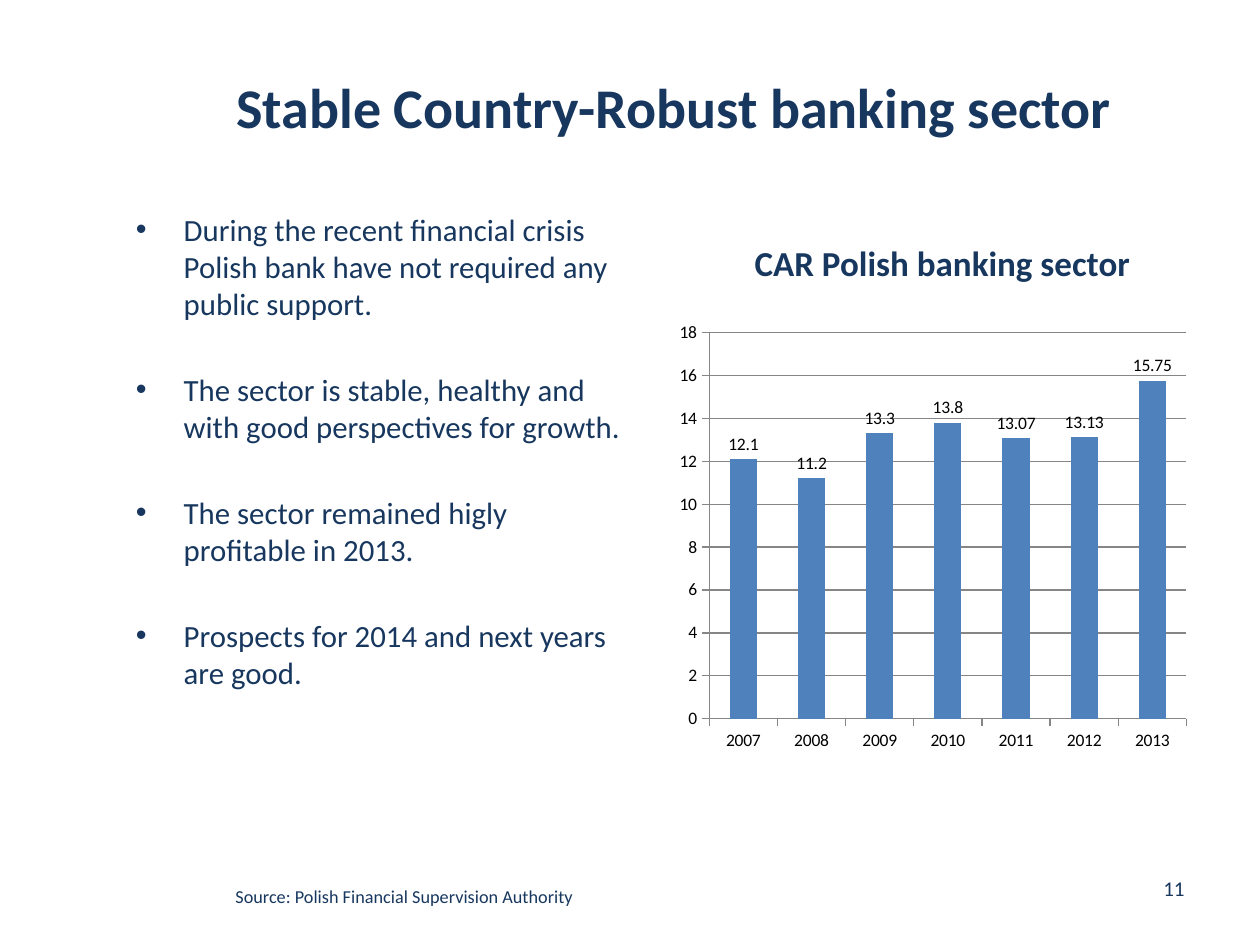
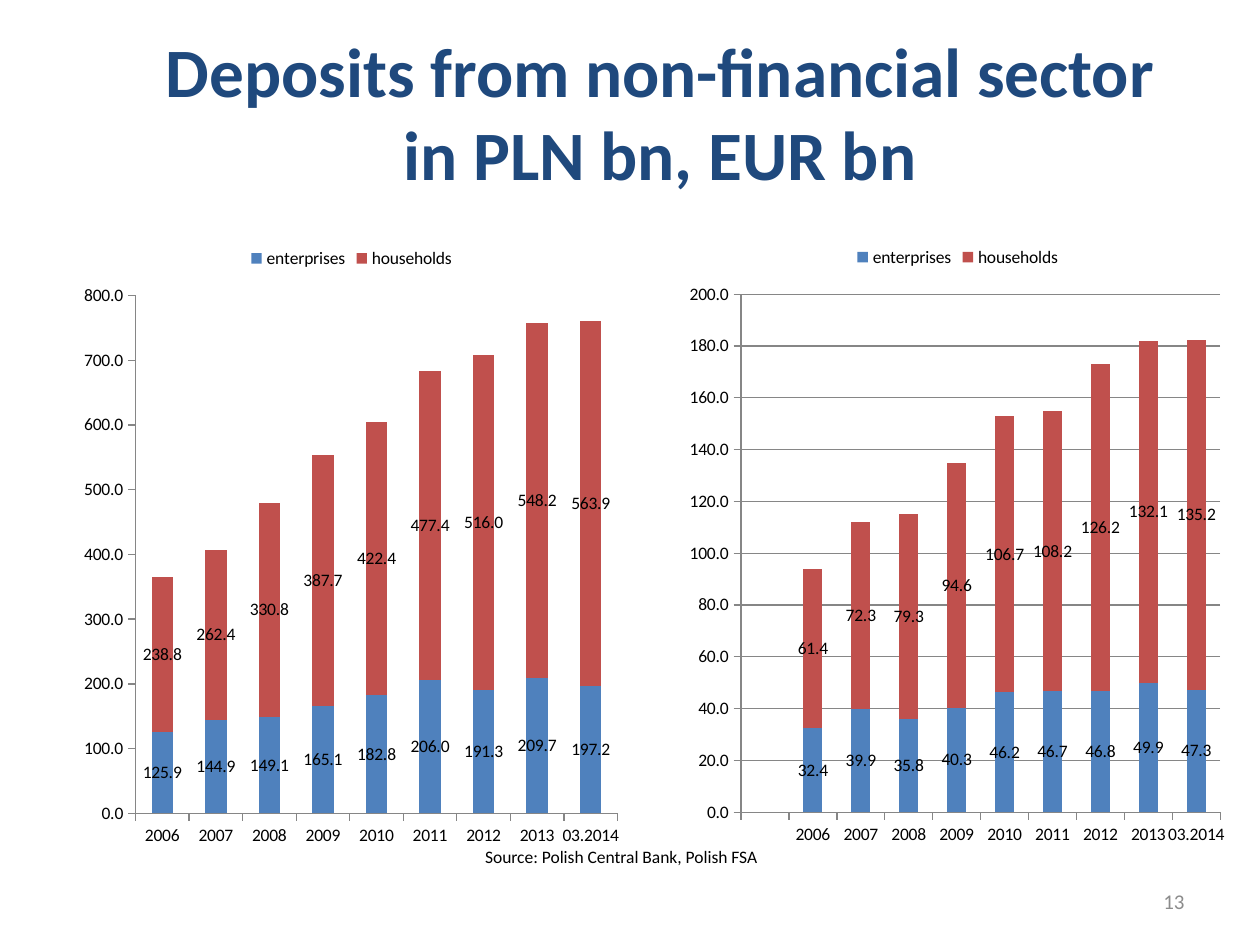
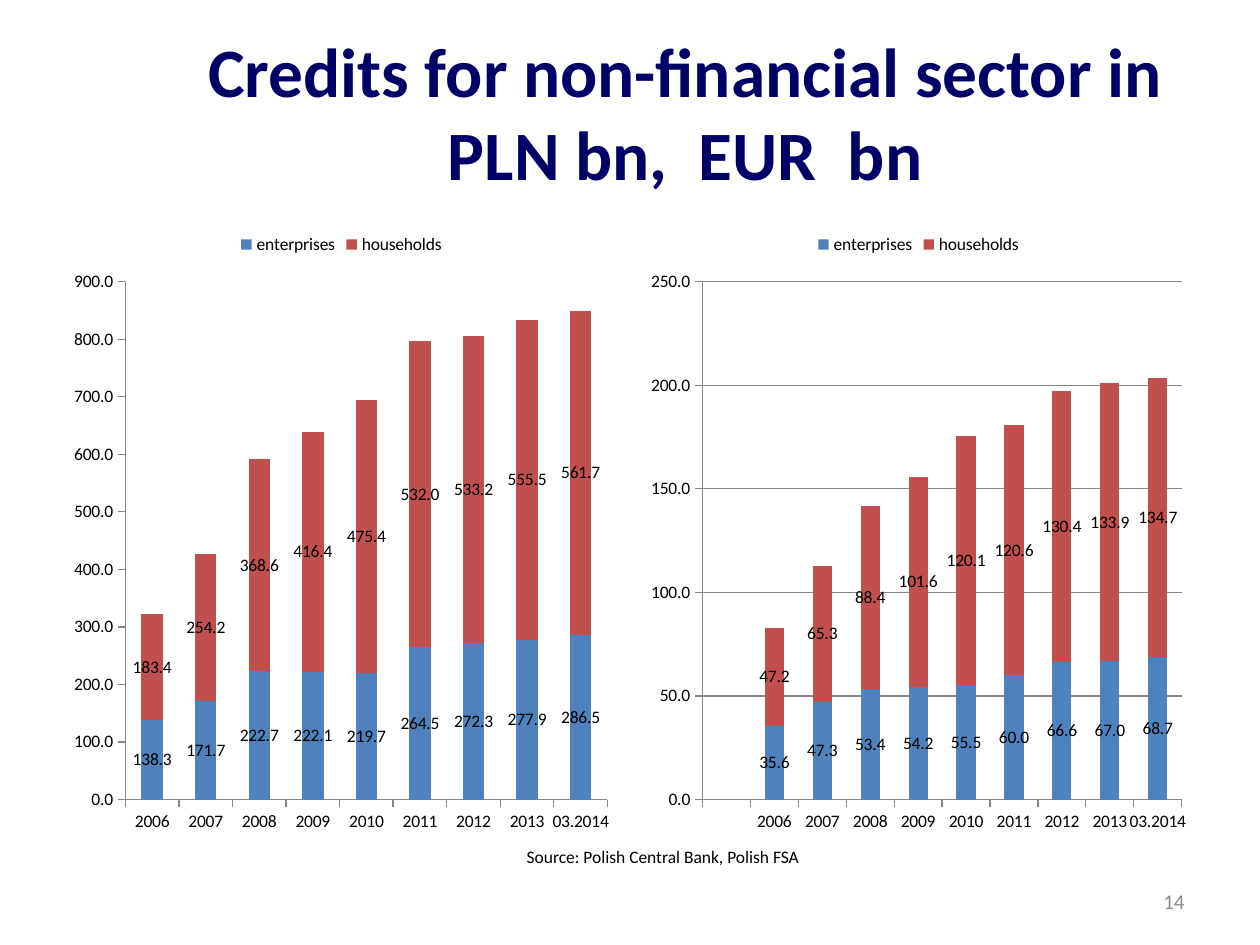
from lxml.etree import SubElement
from pptx import Presentation
from pptx.chart.data import CategoryChartData
from pptx.dml.color import RGBColor
from pptx.enum.chart import XL_CHART_TYPE, XL_LABEL_POSITION, XL_LEGEND_POSITION, XL_TICK_MARK
from pptx.enum.text import MSO_ANCHOR, MSO_AUTO_SIZE, PP_ALIGN
from pptx.oxml.ns import qn
from pptx.util import Inches, Pt

FONT = "Calibri"
BLACK = RGBColor(0x00, 0x00, 0x00)
NAVY = RGBColor(0x17, 0x37, 0x5E)
DEPOSIT_BLUE = RGBColor(0x1F, 0x49, 0x7D)
CREDIT_BLUE = RGBColor(0x00, 0x00, 0x66)
PAGE_GRAY = RGBColor(0x8C, 0x8C, 0x8C)
AXIS_GRAY = RGBColor(0x86, 0x86, 0x86)
SERIES_COLORS = [RGBColor(0x4F, 0x81, 0xBD), RGBColor(0xC0, 0x50, 0x4D)]


def write_text(shape, box, text, size, color, align, bold=False, wrap=True):
    shape.left, shape.top, shape.width, shape.height = [Inches(n) for n in box]
    frame = shape.text_frame
    frame.text = text
    frame.word_wrap = wrap
    frame.auto_size = MSO_AUTO_SIZE.NONE
    frame.vertical_anchor = MSO_ANCHOR.MIDDLE
    for paragraph in frame.paragraphs:
        paragraph.alignment = align
        for run in paragraph.runs:
            run.font.name = FONT
            run.font.size = Pt(size)
            run.font.bold = bold
            run.font.color.rgb = color


def add_columns(slide, kind, box, categories, series, maximum, step, number_format, gridlines):
    data = CategoryChartData()
    data.categories = categories
    for name, values in series.items():
        data.add_series(name, values)
    chart = slide.shapes.add_chart(kind, *[Inches(n) for n in box], data).chart
    chart.font.name = FONT
    chart.font.size = Pt(10)
    chart.font.color.rgb = BLACK
    chart.has_title = False
    chart.has_legend = len(series) > 1
    if chart.has_legend:
        chart.legend.position = XL_LEGEND_POSITION.TOP
        chart.legend.include_in_layout = False

    plot = chart.plots[0]
    plot.vary_by_categories = False
    plot.gap_width = 150
    stacked = kind == XL_CHART_TYPE.COLUMN_STACKED
    plot.overlap = 100 if stacked else 0
    for columns, color in zip(plot.series, SERIES_COLORS):
        columns.format.fill.solid()
        columns.format.fill.fore_color.rgb = color
        labels = columns.data_labels
        labels.show_value = True
        labels.number_format = number_format
        labels.number_format_is_linked = False
        labels.position = XL_LABEL_POSITION.CENTER if stacked else XL_LABEL_POSITION.OUTSIDE_END

    for axis in (chart.category_axis, chart.value_axis):
        axis.major_tick_mark = XL_TICK_MARK.OUTSIDE
        axis.minor_tick_mark = XL_TICK_MARK.NONE
        axis.format.line.color.rgb = AXIS_GRAY
    scale = chart.value_axis
    scale.minimum_scale = 0
    scale.maximum_scale = maximum
    scale.major_unit = step
    scale.tick_labels.number_format = number_format
    scale.tick_labels.number_format_is_linked = False
    scale.has_major_gridlines = gridlines
    if gridlines:
        scale.major_gridlines.format.line.color.rgb = AXIS_GRAY


prs = Presentation()
prs.slide_width = Inches(10)
prs.slide_height = Inches(7.5)
title_only = prs.slide_layouts[5]

stability = prs.slides.add_slide(title_only)
write_text(stability.shapes.title, (0.98, 0.3, 8.74, 1.09), "Stable Country-Robust banking sector",
           32, NAVY, PP_ALIGN.CENTER, bold=True)

findings = [
    "During the recent financial crisis Polish bank have not required any public support.",
    "The sector is stable, healthy and with good perspectives for growth.",
    "The sector remained higly profitable in 2013.",
    "Prospects for 2014 and next years are good.",
]
findings_box = stability.shapes.add_textbox(0, 0, 0, 0)
write_text(findings_box, (0.98, 1.62, 4.17, 4.2), "\n".join(findings), 17.6, NAVY, PP_ALIGN.LEFT)
findings_box.text_frame.vertical_anchor = MSO_ANCHOR.TOP
for index, finding in enumerate(findings_box.text_frame.paragraphs):
    properties = finding._p.get_or_add_pPr()
    properties.set("marL", str(Inches(0.38)))
    properties.set("indent", str(-Inches(0.38)))
    SubElement(properties, qn("a:buFont"), typeface="Arial")
    SubElement(properties, qn("a:buChar"), char="•")
    finding.line_spacing = Pt(21.15)
    finding.space_before = Pt(28 if index else 0)

years = ["2007", "2008", "2009", "2010", "2011", "2012", "2013"]
adequacy = {"Series 1": [12.1, 11.2, 13.3, 13.8, 13.07, 13.13, 15.75]}
add_columns(stability, XL_CHART_TYPE.COLUMN_CLUSTERED, (5.31, 2.49, 4.19, 3.54),
            years, adequacy, 18, 2, "General", True)
write_text(stability.shapes.add_textbox(0, 0, 0, 0), (5.71, 1.86, 3.54, 0.44),
           "CAR Polish banking sector", 20, NAVY, PP_ALIGN.CENTER, bold=True)
write_text(stability.shapes.add_textbox(0, 0, 0, 0), (1.77, 6.98, 2.9, 0.27),
           "Source: Polish Financial Supervision Authority", 10.4, NAVY, PP_ALIGN.LEFT)
write_text(stability.shapes.add_textbox(0, 0, 0, 0), (7.17, 6.74, 2.33, 0.61),
           "11", 12, NAVY, PP_ALIGN.RIGHT)

periods = ["2006", *years, "03.2014"]
sector_slides = [
    {
        "title": "Deposits from non-financial sector in PLN bn, EUR bn",
        "title_box": (0.98, 0.3, 8.52, 1.17),
        "color": DEPOSIT_BLUE,
        "page": "13",
        "source_left": 3.73,
        "pln_at": (0.58, 1.86),
        "pln_scale": (800, 100),
        "pln": {
            "enterprises": [125.9, 144.9, 149.1, 165.1, 182.8, 206, 191.3, 209.7, 197.2],
            "households": [238.8, 262.4, 330.8, 387.7, 422.4, 477.4, 516, 548.2, 563.9],
        },
        "eur_at": (5.39, 1.85),
        "eur_scale": (200, 20),
        "eur": {
            "enterprises": [None, 32.4, 39.9, 35.8, 40.3, 46.2, 46.7, 46.8, 49.9, 47.3],
            "households": [None, 61.4, 72.3, 79.3, 94.6, 106.7, 108.2, 126.2, 132.1, 135.2],
        },
    },
    {
        "title": "Credits for non-financial sector in PLN bn,  EUR  bn",
        "title_box": (1.38, 0.3, 8.12, 1.17),
        "color": CREDIT_BLUE,
        "page": "14",
        "source_left": 4.06,
        "pln_at": (0.5, 1.75),
        "pln_scale": (900, 100),
        "pln": {
            "enterprises": [138.3, 171.7, 222.7, 222.1, 219.7, 264.5, 272.3, 277.9, 286.5],
            "households": [183.4, 254.2, 368.6, 416.4, 475.4, 532, 533.2, 555.5, 561.7],
        },
        "eur_at": (5.08, 1.75),
        "eur_scale": (250, 50),
        "eur": {
            "enterprises": [None, 35.6, 47.3, 53.4, 54.2, 55.5, 60, 66.6, 67, 68.7],
            "households": [None, 47.2, 65.3, 88.4, 101.6, 120.1, 120.6, 130.4, 133.9, 134.7],
        },
    },
]

for sector in sector_slides:
    slide = prs.slides.add_slide(title_only)
    write_text(slide.shapes.title, sector["title_box"], sector["title"],
               39.6, sector["color"], PP_ALIGN.CENTER, bold=True)
    write_text(slide.shapes.add_textbox(0, 0, 0, 0), (7.17, 6.95, 2.33, 0.4),
               sector["page"], 12, PAGE_GRAY, PP_ALIGN.RIGHT)
    for currency, categories, gridlines in (("pln", periods, False), ("eur", ["", *periods], True)):
        add_columns(slide, XL_CHART_TYPE.COLUMN_STACKED, (*sector[currency + "_at"], 4.42, 4.95),
                    categories, sector[currency], *sector[currency + "_scale"], "0.0", gridlines)
    write_text(slide.shapes.add_textbox(0, 0, 0, 0), (sector["source_left"], 6.66, 2.4, 0.27),
               "Source: Polish Central Bank, Polish FSA", 10, BLACK, PP_ALIGN.CENTER, wrap=False)

prs.save("out.pptx")
